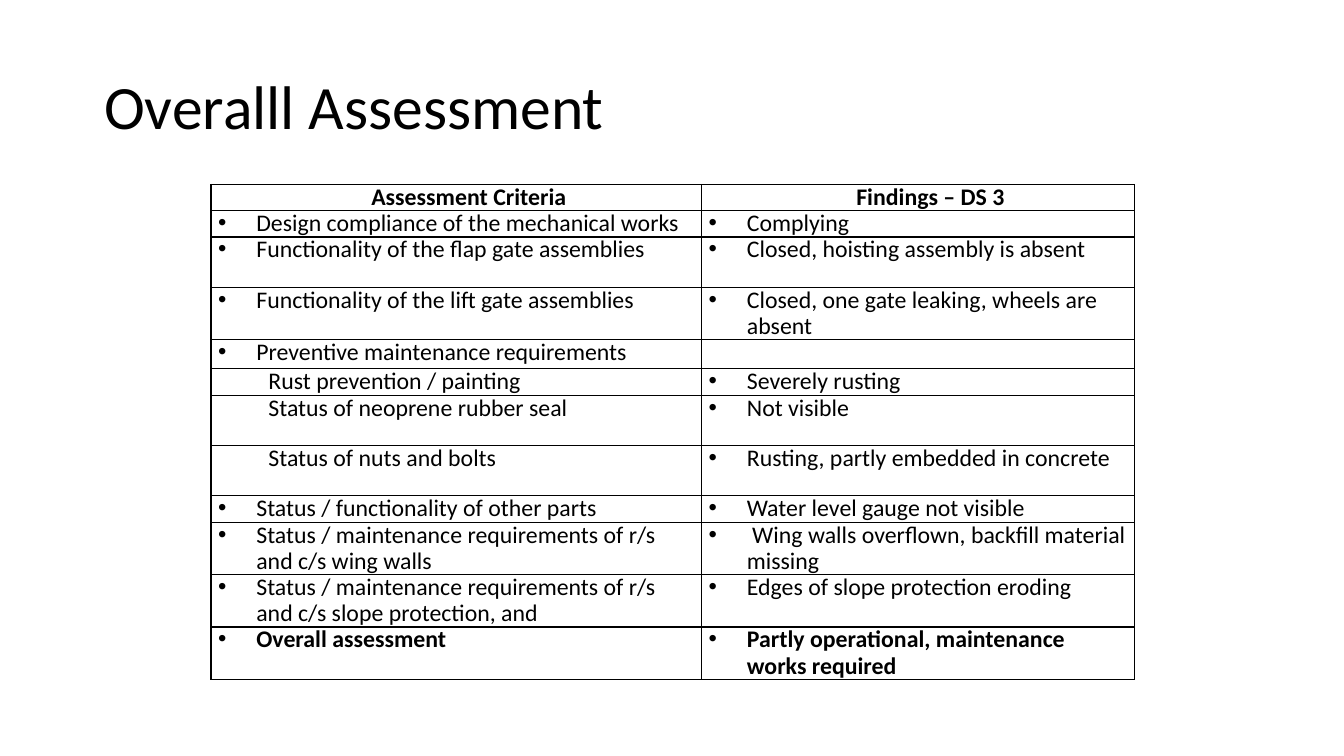
from dataclasses import dataclass

from pptx import Presentation
from pptx.dml.color import RGBColor as Rgb
from pptx.enum.text import MSO_ANCHOR as Anchor, MSO_AUTO_SIZE as Fit, PP_ALIGN as Align
from pptx.oxml.xmlchemy import OxmlElement as Node
from pptx.util import Inches, Pt


@dataclass(frozen=True)
class Theme:
    font: str = "Calibri"
    ink: str = "000000"
    head: int = 44
    body: int = 17
    rule: int = 1
    lead: float = 0.9


HEADS = ("Assessment Criteria", "Findings – DS 3")
ROWS = (
    (1, 0, "Design compliance of the mechanical works", "Complying"),
    (2, 0, "Functionality of the flap gate assemblies", "Closed, hoisting assembly is absent"),
    (2, 0, "Functionality of the lift gate assemblies", "Closed, one gate leaking, wheels are absent"),
    (1, 0, "Preventive maintenance requirements", ""),
    (1, 1, "Rust prevention / painting", "Severely rusting"),
    (2, 1, "Status of neoprene rubber seal", "Not visible"),
    (2, 1, "Status of nuts and bolts", "Rusting, partly embedded in concrete"),
    (1, 0, "Status / functionality of other parts", "Water level gauge not visible"),
    (2, 0, "Status / maintenance requirements of r/s and c/s wing walls",
     " Wing walls overflown, backfill material missing"),
    (2, 0, "Status / maintenance requirements of r/s and c/s slope protection, and",
     "Edges of slope protection eroding"),
    (2, 0, "Overall assessment", "Partly operational, maintenance works required"),
)
HEAD = dict(align=Align.CENTER, bold=True, margin=0.25)
ITEM = dict(margin=0.38, hang=-0.38, tab=0.5, mark="•")
SUB = dict(margin=0.81, hang=-0.31, tab=1, level=1)


def add(root, tag, **attrs):
    node = Node(tag)
    for key, value in attrs.items():
        node.set(key, str(value))
    root.append(node)
    return node


def put(frame, text, theme, size, align=Align.LEFT, bold=False,
        margin=0, hang=0, tab=None, mark=None, level=0):
    para = frame.paragraphs[0]
    para.alignment = align
    para.level = level
    para.line_spacing = theme.lead
    para.space_before = Pt(0)
    props = para._p.get_or_add_pPr()
    props.set("marL", str(Inches(margin)))
    props.set("indent", str(Inches(hang)))
    if mark:
        add(props, "a:buFont", typeface="Arial")
        add(props, "a:buChar", char=mark)
    else:
        add(props, "a:buNone")
    if tab:
        add(add(props, "a:tabLst"), "a:tab", pos=Inches(tab), algn="l")
    if not text:
        add(para._p, "a:endParaRPr", sz=size * 100)
        return
    run = para.add_run()
    run.text = text
    font = run.font
    font.name, font.size, font.bold = theme.font, Pt(size), bold
    font.color.rgb = Rgb.from_string(theme.ink)


class Deck:
    def __init__(self, theme):
        self.theme = theme
        self.file = Presentation()
        self.file.slide_width = Inches(13.333)
        self.file.slide_height = Inches(7.5)
        self.slide = self.file.slides.add_slide(self.file.slide_layouts[5])

    def wide(self, share):
        return int(self.file.slide_width * share)

    def high(self, share):
        return int(self.file.slide_height * share)

    def title(self, text, x, y, w, h):
        box = self.slide.shapes.title
        box.left, box.top = self.wide(x), self.high(y)
        box.width, box.height = self.wide(w), self.high(h)
        frame = box.text_frame
        frame.word_wrap = True
        frame.auto_size = Fit.NONE
        frame.vertical_anchor = Anchor.MIDDLE
        put(frame, text, self.theme, self.theme.head)

    def cell(self, cell, text, **form):
        cell.margin_left = cell.margin_right = Inches(0.07)
        cell.margin_top = cell.margin_bottom = 0
        cell.fill.background()
        props = cell._tc.get_or_add_tcPr()
        for spot, side in enumerate("LRTB"):
            line = add(props, f"a:ln{side}", w=Pt(self.theme.rule))
            add(add(line, "a:solidFill"), "a:srgbClr", val=self.theme.ink)
            props.insert(spot, line)
        put(cell.text_frame, text, self.theme, self.theme.body, **form)

    def table(self, heads, rows, x, y, cols, unit):
        lines = [1] + [row[0] for row in rows]
        grid = self.slide.shapes.add_table(
            len(lines), len(cols), self.wide(x), self.high(y),
            self.wide(sum(cols)), self.high(unit * sum(lines))).table
        grid.first_row = grid.horz_banding = False
        for col, share in zip(grid.columns, cols):
            col.width = self.wide(share)
        for row, count in zip(grid.rows, lines):
            row.height = self.high(unit * count)
        for c, text in enumerate(heads):
            self.cell(grid.cell(0, c), text, **HEAD)
        for r, (_, sub, left, right) in enumerate(rows, 1):
            bold = r == len(rows)
            self.cell(grid.cell(r, 0), left, bold=bold, **(SUB if sub else ITEM))
            self.cell(grid.cell(r, 1), right, bold=bold, **ITEM)


def main():
    deck = Deck(Theme())
    deck.title("Overalll Assessment", 0.07, 0.05, 0.86, 0.19)
    deck.table(HEADS, ROWS, 0.157, 0.244, (0.365, 0.322), 1 / 30)
    deck.file.save("out.pptx")


if __name__ == "__main__":
    main()
